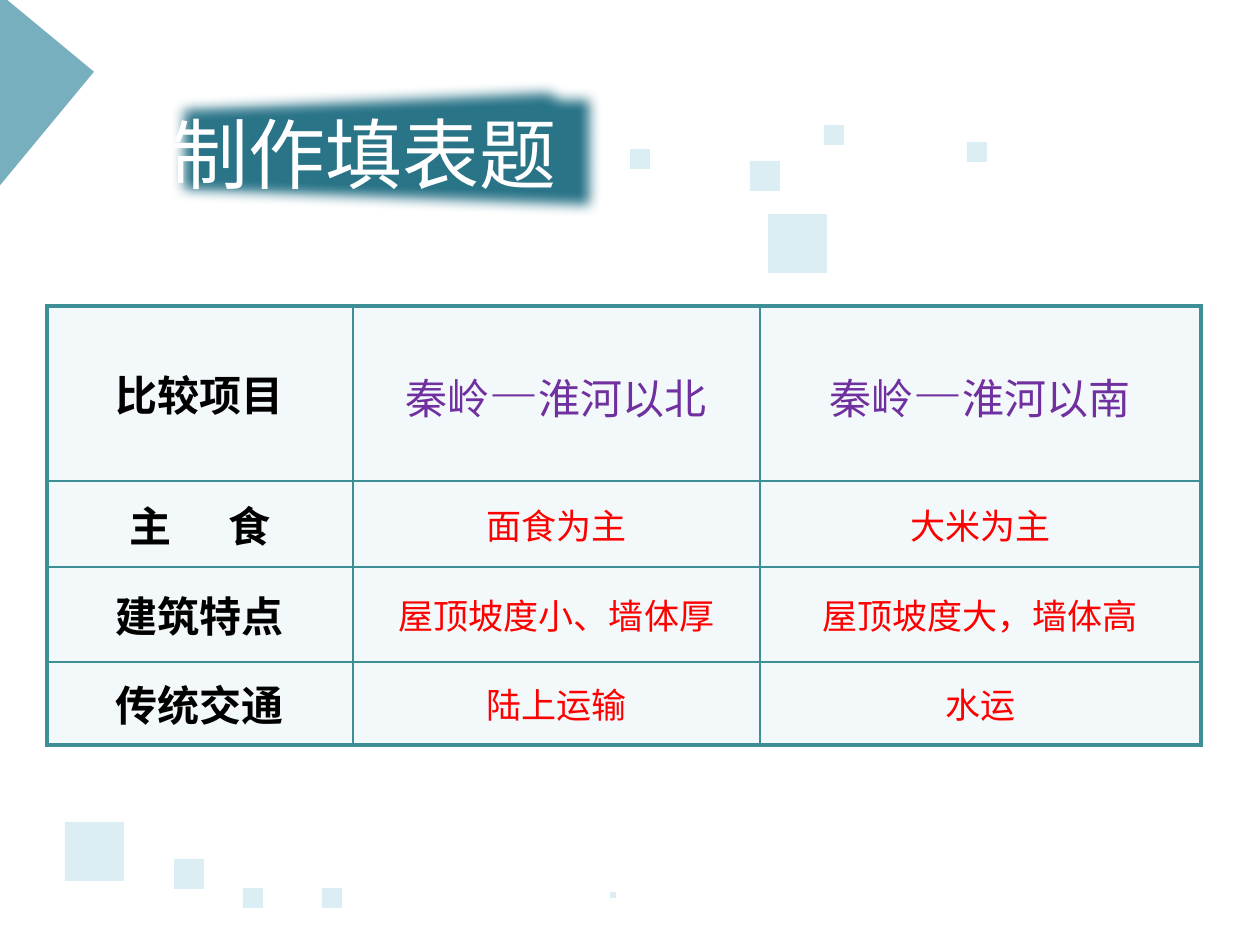
from itertools import accumulate

from lxml import etree
from pptx import Presentation
from pptx.dml.color import RGBColor
from pptx.enum.shapes import MSO_SHAPE
from pptx.enum.text import MSO_ANCHOR, PP_ALIGN
from pptx.oxml.ns import qn
from pptx.util import Pt

# Content
TITLE = "制作填表题"
HEADINGS = [
    [("比较项目", "label")],
    [("秦岭", "region"), ("—", "dash"), ("淮河以北", "region")],
    [("秦岭", "region"), ("—", "dash"), ("淮河以南", "region")],
]
# label pieces, north, south, answer style
COMPARISONS = [
    (["主", " ", "食"], "面食为主", "大米为主", "staple"),
    (["建筑特点"], "屋顶坡度小、墙体厚", "屋顶坡度大，墙体高", "answer"),
    (["传统交通"], "陆上运输", "水运", "answer"),
]
LABEL_GAP = 2700  # letter spacing, in hundredths of a point

# Layout in px: decorative squares are left, top, side
SCALE = 914400 // 126
SLIDE = (1260, 945)
SQUARES = [
    (65, 822, 59), (174, 859, 30), (243, 888, 20), (322, 888, 20), (610, 892, 6),
    (768, 214, 59), (630, 149, 20), (750, 161, 30), (824, 125, 20), (967, 142, 20),
]
CORNER, CORNER_ANGLE, CORNER_OPACITY = (-272, -60, 304), 39.6, 65000
BANNER = [(172, 98), (560, 80), (572, 88), (602, 88), (602, 218), (172, 202)]
BANNER_SOFTNESS = 13
TITLE_BOX = (123, 91, 482, 123)
TABLE_AT = (47, 306)
COLUMNS = [306, 407, 441]
ROWS = [175, 86, 95, 83]

CJK = "Noto Sans CJK SC"
THEME = {
    "square": "DBEEF4", "teal": "31859C", "banner": "2A7488",
    "cell": "F3F9FA", "border": "3D8F95", "thin": 1, "thick": 2.25,
    "text": {
        "title": {"size": 44, "name": CJK, "color": "FFFFFF", "bold": False},
        "label": {"size": 24, "name": CJK, "color": "000000", "bold": True},
        "region": {"size": 24, "name": CJK, "color": "7030A0", "bold": False},
        "dash": {"size": 28, "name": CJK, "color": "7030A0", "bold": False},
        "staple": {"size": 20, "name": "Arial", "color": "FF0000", "bold": False},
        "answer": {"size": 20, "name": "Times New Roman", "color": "FF0000", "bold": False},
    },
}


def px(*lengths):
    return [length * SCALE for length in lengths]


def add(parent, tag, **attributes):
    return etree.SubElement(parent, qn(tag), attributes)


def paint(shape, color):
    shape.shadow.inherit = False
    shape.fill.solid()
    shape.fill.fore_color.rgb = RGBColor.from_string(color)
    shape.line.fill.background()
    return shape


def add_square(slide, left, top, side, color):
    square = slide.shapes.add_shape(MSO_SHAPE.RECTANGLE, *px(left, top, side, side))
    return paint(square, color)


def write(frame, pieces):
    paragraph = frame.paragraphs[0]
    paragraph.alignment = PP_ALIGN.CENTER
    for words, style in pieces:
        run = paragraph.add_run()
        run.text = words
        look = dict(THEME["text"][style])
        run.font.color.rgb = RGBColor.from_string(look.pop("color"))
        look["size"] = Pt(look["size"])
        for attribute, value in look.items():
            setattr(run.font, attribute, value)
        properties = run.font._element
        add(properties, "a:ea", typeface=CJK)
        if words == " ":
            properties.set("spc", str(LABEL_GAP))
    return paragraph


def space_before(paragraph, percent):
    spacing = add(paragraph._p.get_or_add_pPr(), "a:spcBef")
    add(spacing, "a:spcPct", val=str(percent * 1000))


def draw_border(cell, row, column):
    outer = {
        "a:lnL": column == 0, "a:lnR": column == len(COLUMNS) - 1,
        "a:lnT": row == 0, "a:lnB": row == len(ROWS) - 1,
    }
    properties = cell._tc.get_or_add_tcPr()
    for position, (side, is_outer) in enumerate(outer.items()):
        width = Pt(THEME["thick" if is_outer else "thin"])
        edge = etree.Element(qn(side), w=str(int(width)))
        add(add(edge, "a:solidFill"), "a:srgbClr", val=THEME["border"])
        properties.insert(position, edge)


def add_corner(slide):
    corner = add_square(slide, *CORNER, THEME["teal"])
    corner.rotation = CORNER_ANGLE
    color = corner._element.spPr.find(".//" + qn("a:srgbClr"))
    add(color, "a:alpha", val=str(CORNER_OPACITY))


def add_title(slide):
    builder = slide.shapes.build_freeform(*BANNER[0], scale=SCALE)
    builder.add_line_segments(BANNER[1:], close=True)
    banner = paint(builder.convert_to_shape(), THEME["banner"])
    effects = banner._element.spPr.find(qn("a:effectLst"))
    add(effects, "a:softEdge", rad=str(BANNER_SOFTNESS * SCALE))
    frame = slide.shapes.add_textbox(*px(*TITLE_BOX)).text_frame
    frame.word_wrap = True
    frame.vertical_anchor = MSO_ANCHOR.MIDDLE
    write(frame, [(TITLE, "title")])


def add_comparison(slide):
    body = [
        [[(piece, "label") for piece in label], [(north, style)], [(south, style)]]
        for label, north, south, style in COMPARISONS
    ]
    size = px(*TABLE_AT, sum(COLUMNS), sum(ROWS))
    table = slide.shapes.add_table(len(ROWS), len(COLUMNS), *size).table
    for column, width in zip(table.columns, px(*COLUMNS)):
        column.width = width
    for row, height in zip(table.rows, px(*ROWS)):
        row.height = height
    for r, cells in enumerate([HEADINGS] + body):
        for c, pieces in enumerate(cells):
            cell = table.cell(r, c)
            cell.vertical_anchor = MSO_ANCHOR.MIDDLE
            cell.fill.solid()
            cell.fill.fore_color.rgb = RGBColor.from_string(THEME["cell"])
            draw_border(cell, r, c)
            is_last_label = r == len(ROWS) - 1 and c == 0
            space_before(write(cell.text_frame, pieces), 50 if is_last_label else 20)


def main():
    deck = Presentation()
    deck.slide_width, deck.slide_height = px(*SLIDE)
    slide = deck.slides.add_slide(deck.slide_layouts[6])
    # Decoration
    for square in SQUARES:
        add_square(slide, *square, THEME["square"])
    add_corner(slide)
    # Title and table
    add_title(slide)
    add_comparison(slide)
    deck.save("out.pptx")


if __name__ == "__main__":
    main()
